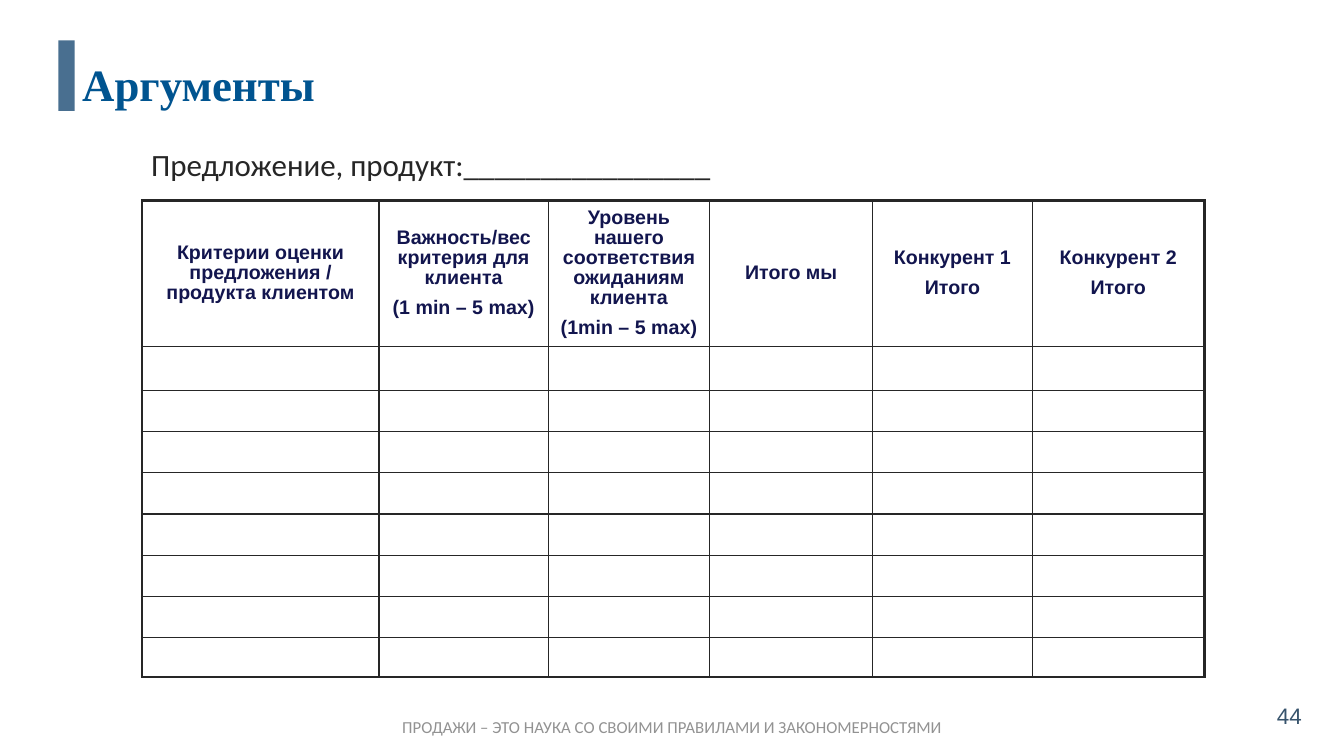
import pptx
import pptx.dml.color
import pptx.enum.shapes
import pptx.enum.text
import pptx.oxml
import pptx.oxml.ns
import pptx.util

Pt = pptx.util.Pt
RGB = pptx.dml.color.RGBColor.from_string
ALIGN = pptx.enum.text.PP_ALIGN
ANCHOR = pptx.enum.text.MSO_ANCHOR

THEME = {
    "bar": "496F90",
    "border": "262626",
    "inner_line": 1,
    "outer_line": 2.25,
    "title": {"name": "Times New Roman", "size": 32, "color": "005490", "bold": True},
    "product": {"name": "Calibri", "size": 22.1, "color": "262626", "bold": False},
    "header": {"name": "Arial", "size": 14, "color": "12154E", "bold": True},
    "footer": {"name": "Calibri", "size": 12, "color": "929292", "bold": False},
    "number": {"name": "Arial", "size": 16, "color": "37536C", "bold": False},
}


def write(p, text, style):
    r = p.add_run()
    r.text = text
    values = {"name": style["name"], "size": Pt(style["size"]), "bold": style["bold"]}
    for name, value in values.items():
        setattr(r.font, name, value)
    r.font.color.rgb = RGB(style["color"])


def set_border(cell, side, width):
    """Draw one side of a cell; side is L, R, T or B."""
    cell._tc.get_or_add_tcPr().append(pptx.oxml.parse_xml(
        f'<a:ln{side} {pptx.oxml.ns.nsdecls("a")} w="{Pt(width)}">'
        f'<a:solidFill><a:srgbClr val="{THEME["border"]}"/></a:solidFill></a:ln{side}>'))


prs = pptx.Presentation()
prs.slide_width, prs.slide_height = Pt(960), Pt(540)
s = prs.slides.add_slide(prs.slide_layouts[6])

# Title bar
bar = s.shapes.add_shape(pptx.enum.shapes.MSO_SHAPE.RECTANGLE, Pt(41.8), Pt(28.8), Pt(11.5), Pt(50.4))
bar.shadow.inherit = False
bar.fill.solid()
bar.fill.fore_color.rgb = RGB(THEME["bar"])
bar.line.fill.background()

# Comparison table
columns = [
    (169.2, ["Критерии оценки предложения / продукта клиентом"]),
    (121, ["Важность/вес критерия для клиента", "(1 min – 5 max)"]),
    (115.2, ["Уровень нашего соответствия ожиданиям клиента", "(1min – 5 max)"]),
    (116.6, ["Итого мы"]),
    (113.8, ["Конкурент 1", "Итого"]),
    (123.1, ["Конкурент 2", "Итого"]),
]
heights = [104.4, 31] + [29.5] * 6 + [28.1]
last_row, last_col = len(heights) - 1, len(columns) - 1

frame = s.shapes.add_table(len(heights), len(columns), Pt(101.5), Pt(143.3),
                           Pt(sum(width for width, _ in columns)), Pt(sum(heights)))
table = frame.table
table.first_row = table.horz_banding = False

for col, (width, _) in enumerate(columns):
    table.columns[col].width = Pt(width)

for row, height in enumerate(heights):
    table.rows[row].height = Pt(height)
    for col, (_, lines) in enumerate(columns):
        cell = table.cell(row, col)
        cell.vertical_anchor = ANCHOR.MIDDLE
        cell.margin_left = cell.margin_right = Pt(6.5)
        cell.margin_top = cell.margin_bottom = Pt(3.6 if row == 0 else 0)
        outer = {"L": col == 0, "R": col == last_col, "T": row == 0, "B": row == last_row}
        for side, is_outer in outer.items():
            set_border(cell, side, THEME["outer_line" if is_outer else "inner_line"])
        cell.fill.background()
        if row > 0:
            continue
        tf = cell.text_frame
        for i, line in enumerate(lines):
            p = tf.add_paragraph() if i else tf.paragraphs[0]
            p.alignment = ALIGN.CENTER
            p.line_spacing = 0.9
            p.space_before = Pt(7.7 if i else 0)
            write(p, line, THEME["header"])

# Text boxes: style, text, box, left and right inset, alignment, line spacing, wrap
texts = [
    ("footer", "ПРОДАЖИ – ЭТО НАУКА СО СВОИМИ ПРАВИЛАМИ И ЗАКОНОМЕРНОСТЯМИ",
     (273.6, 508.3, 413.3, 21.6), (7.2, 7.2), ALIGN.CENTER, 1, False),
    ("product", "Предложение, продукт:________________",
     (101.5, 100.1, 534.2, 33.8), (6.5, 6.5), ALIGN.LEFT, 1, True),
    ("number", "44", (905, 498.2, 50, 28.8), (7.2, 7.2), ALIGN.LEFT, 1, True),
    ("title", "Аргументы", (53.3, 21.6, 184.3, 59.8), (0, 7.2), ALIGN.CENTER, 1.4, True),
]
for style, text, box, (left, right), align, spacing, wrap in texts:
    tf = s.shapes.add_textbox(*map(Pt, box)).text_frame
    frame_values = {"word_wrap": wrap, "margin_left": Pt(left), "margin_right": Pt(right),
                    "margin_top": Pt(3.6), "margin_bottom": Pt(3.6)}
    for name, value in frame_values.items():
        setattr(tf, name, value)
    p = tf.paragraphs[0]
    p.alignment = align
    p.line_spacing = float(spacing)
    write(p, text, THEME[style])

prs.save("out.pptx")
